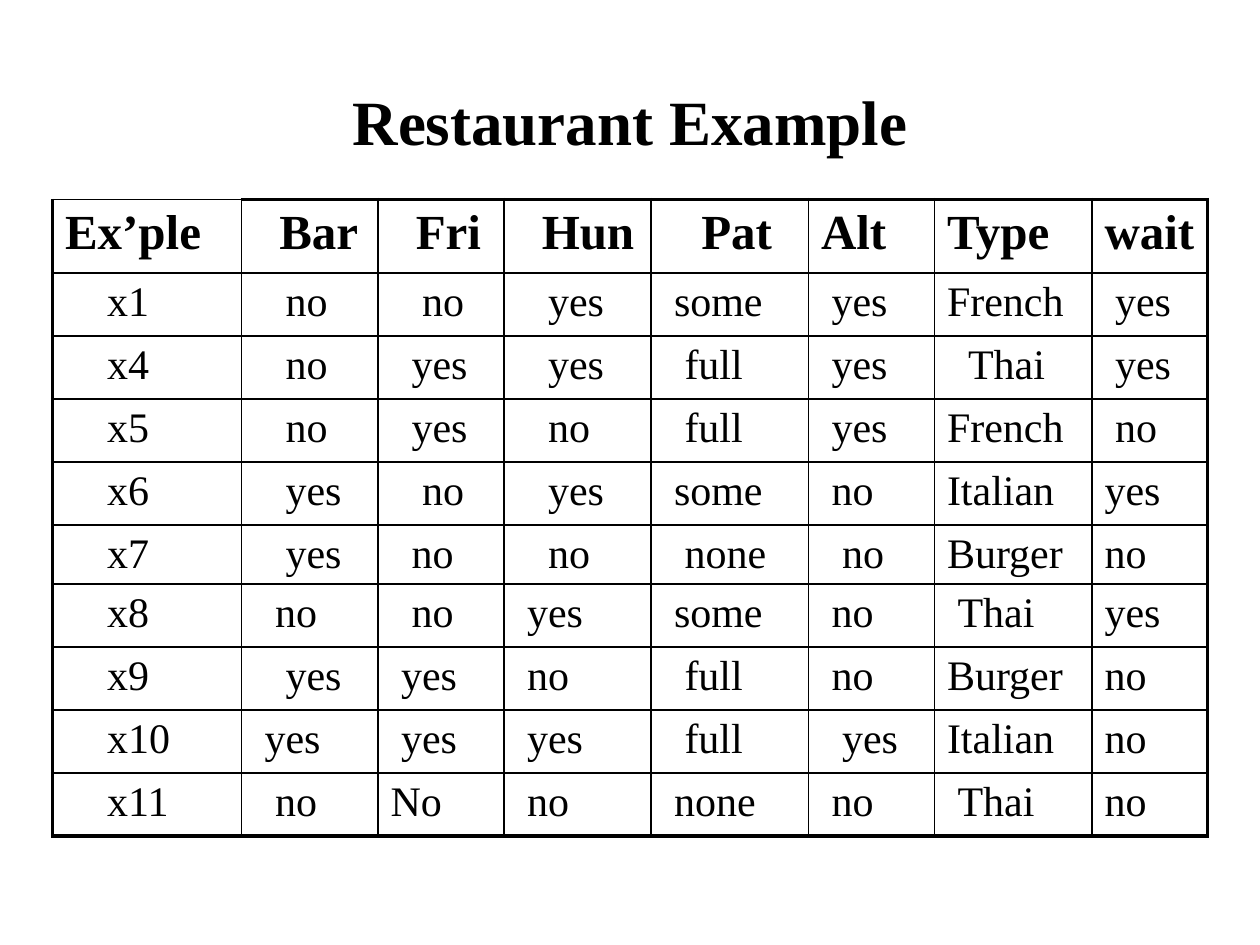
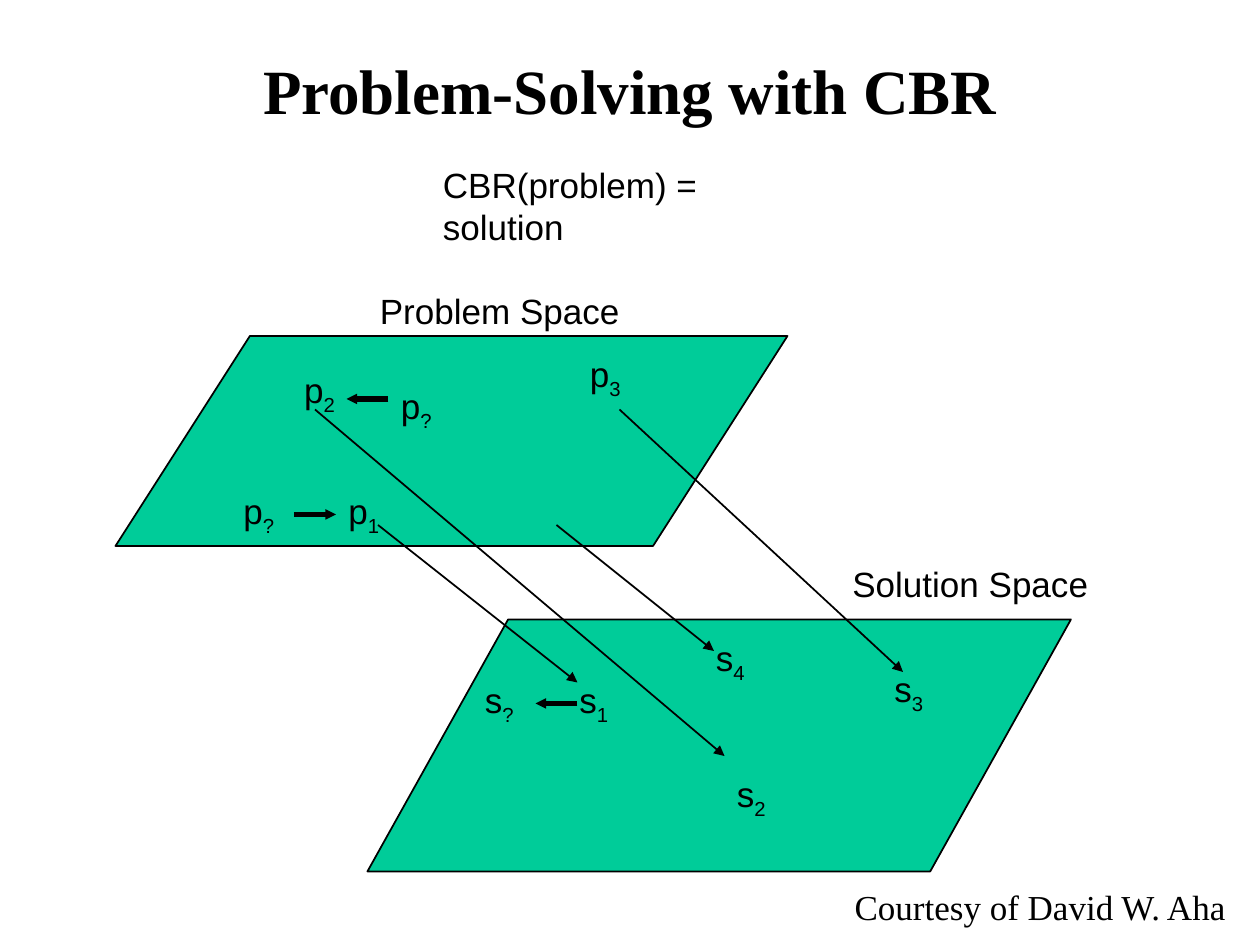
"""Build two slides: a restaurant decision table and a case-based reasoning diagram."""
from lxml.etree import SubElement
from pptx import Presentation
from pptx.dml.color import RGBColor
from pptx.enum.shapes import MSO_CONNECTOR, MSO_SHAPE
from pptx.enum.text import MSO_ANCHOR, PP_ALIGN
from pptx.oxml.ns import qn
from pptx.util import Pt

PX = 7620
COLORS = {"ink": "000000", "space": "00CC99"}
INK = RGBColor.from_string(COLORS["ink"])
SERIF, SANS = "Times New Roman", "Arial"

deck = Presentation()
deck.slide_width, deck.slide_height = 1200 * PX, 900 * PX


def write(frame, text, subscript="", size=20, font=SANS, bold=False,
          align=PP_ALIGN.LEFT, anchor=MSO_ANCHOR.TOP, wrap=True):
    frame.word_wrap = wrap
    frame.vertical_anchor = anchor
    para = frame.paragraphs[0]
    para.alignment = align
    for part in filter(None, (text, subscript)):
        span = para.add_run()
        span.text = part
        span.font.size, span.font.name, span.font.bold = Pt(size), font, bold
        span.font.color.rgb = INK
    if subscript:
        span._r.get_or_add_rPr().set("baseline", "-25000")


def add_page(title, top):
    page = deck.slides.add_slide(deck.slide_layouts[6])
    box = page.shapes.add_textbox(90 * PX, top * PX, 1020 * PX, 150 * PX)
    write(box.text_frame, title, size=36, font=SERIF, bold=True,
          align=PP_ALIGN.CENTER, anchor=MSO_ANCHOR.MIDDLE)
    return page


page = add_page("Restaurant Example", 40)

column_widths = [180, 130, 120, 140, 150, 120, 150, 110]
row_heights = [70, 60, 60, 60, 60, 50, 60, 60, 60, 60]
examples = [
    "Ex’ple Bar Fri Hun Pat Alt Type wait",
    "x1 no no yes some yes French yes",
    "x4 no yes yes full yes Thai yes",
    "x5 no yes no full yes French no",
    "x6 yes no yes some no Italian yes",
    "x7 yes no no none no Burger no",
    "x8 no no yes some no Thai yes",
    "x9 yes yes no full no Burger no",
    "x10 yes yes yes full yes Italian no",
    "x11 no No no none no Thai no",
]
indent_steps = [
    "02223000", "43331101", "43232121", "43232101", "43331100",
    "43232200", "42211110", "43112100", "41112200", "42011110",
]
last_row, last_column = len(row_heights) - 1, len(column_widths) - 1

table = page.shapes.add_table(len(row_heights), len(column_widths), 50 * PX, 190 * PX,
                              sum(column_widths) * PX, sum(row_heights) * PX).table
table.first_row = table.horz_banding = False
for column, width in zip(table.columns, column_widths):
    column.width = width * PX
for row, height in zip(table.rows, row_heights):
    row.height = height * PX

for row_index, (example, steps) in enumerate(zip(examples, indent_steps)):
    header = row_index == 0
    for column_index, (word, step) in enumerate(zip(example.split(), steps)):
        cell = table.cell(row_index, column_index)
        cell.margin_left = (12 + int(step) * (12 if header else 10)) * PX
        cell.margin_right = 0
        cell.margin_bottom = 2 * PX
        write(cell.text_frame, word, size=28 if header else 24, font=SERIF, bold=header)
        thick_sides = {
            "lnL": column_index == 0,
            "lnR": column_index == last_column,
            "lnT": header and column_index > 0,
            "lnB": row_index == last_row,
        }
        properties = cell._tc.get_or_add_tcPr()
        for side, thick in thick_sides.items():
            border = SubElement(properties, qn(f"a:{side}"), w=str(Pt(2.25 if thick else 1)))
            fill = SubElement(border, qn("a:solidFill"))
            SubElement(fill, qn("a:srgbClr"), val=COLORS["ink"])
        cell.fill.background()

page = add_page("Problem-Solving with CBR", 10)

for left, top, width, height in [(350, 590, 670, 240), (110, 320, 640, 200)]:
    space = page.shapes.add_shape(MSO_SHAPE.FLOWCHART_DATA,
                                  left * PX, top * PX, width * PX, height * PX)
    space.shadow.inherit = False
    space.fill.solid()
    space.fill.fore_color.rgb = RGBColor.from_string(COLORS["space"])
    space.line.color.rgb = INK
    space.line.width = Pt(1)

captions = [
    ("CBR(problem) = solution", 410, 150, 380, SANS, True),
    ("Problem Space", 350, 270, 260, SANS, False),
    ("Solution Space", 800, 530, 260, SANS, False),
    ("Courtesy of David W. Aha", 802, 837, 380, SERIF, False),
]
for text, left, top, width, font, wrap in captions:
    box = page.shapes.add_textbox(left * PX, top * PX, width * PX, 52 * PX)
    write(box.text_frame, text, font=font, wrap=wrap)

cases = [
    ("p2", 278, 345), ("p1", 320, 460), ("p3", 550, 330),
    ("s1", 540, 640), ("s2", 690, 730), ("s3", 840, 630), ("s4", 670, 600),
    ("p?", 370, 360), ("p?", 220, 460), ("s?", 450, 640),
]
for (letter, index), left, top in cases:
    box = page.shapes.add_textbox(left * PX, top * PX, 62 * PX, 52 * PX)
    write(box.text_frame, letter, subscript=index)

arrows = [
    (360, 500, 550, 650, 1, "med"), (300, 390, 690, 720, 1, "med"),
    (590, 390, 860, 640, 1, "med"), (530, 500, 680, 620, 1, "med"),
    (370, 380, 330, 380, 3, "sm"), (280, 490, 320, 490, 3, "sm"),
    (550, 670, 510, 670, 3, "sm"),
]
for *ends, weight, head in arrows:
    arrow = page.shapes.add_connector(MSO_CONNECTOR.STRAIGHT, *(end * PX for end in ends))
    arrow.line.color.rgb = INK
    arrow.line.width = Pt(weight)
    SubElement(arrow.line._get_or_add_ln(), qn("a:tailEnd"), type="triangle", w=head, len=head)
    SubElement(arrow._element.spPr, qn("a:effectLst"))

deck.save("out.pptx")
